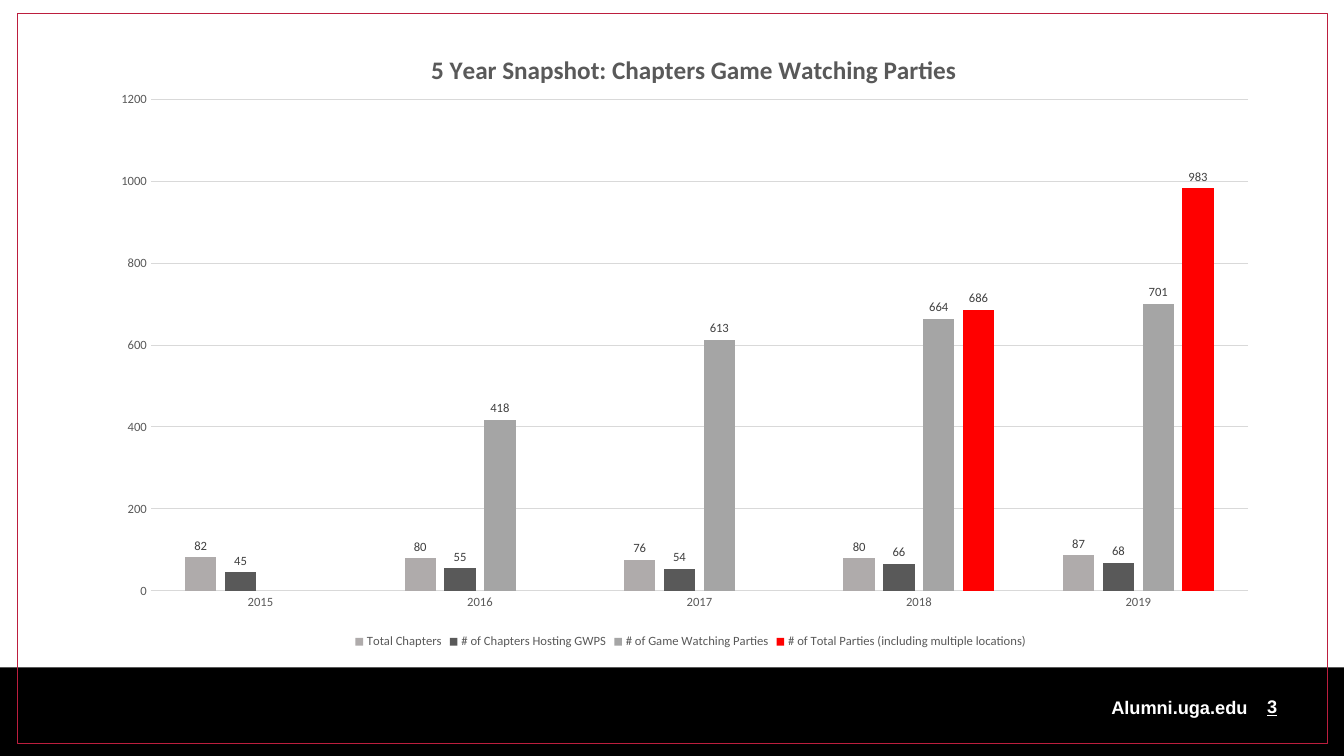
from lxml import etree
from pptx import Presentation
from pptx import util as u
from pptx.chart.data import CategoryChartData
from pptx.dml.color import RGBColor
from pptx.enum import chart as ch
from pptx.enum import shapes, text
from pptx.oxml.ns import qn

WHITE = RGBColor(0xFF, 0xFF, 0xFF)
BLACK = RGBColor(0, 0, 0)
CRIMSON = RGBColor(0xBC, 0x1E, 0x3E)
GRID = RGBColor(0xD9, 0xD9, 0xD9)
AXIS_TEXT = RGBColor(0x59, 0x59, 0x59)
LABEL_TEXT = RGBColor(0x40, 0x40, 0x40)

YEARS = ["2015", "2016", "2017", "2018", "2019"]
SERIES = [
    ("Total Chapters", (82, 80, 76, 80, 87), RGBColor(0xAF, 0xAB, 0xAB)),
    ("# of Chapters Hosting GWPS", (45, 55, 54, 66, 68), AXIS_TEXT),
    ("# of Game Watching Parties", (None, 418, 613, 664, 701), RGBColor(0xA5, 0xA5, 0xA5)),
    ("# of Total Parties (including multiple locations)", (None, None, None, 686, 983),
     RGBColor(0xFF, 0, 0)),
]


def style_font(font, size, color, name="Calibri", bold=False, underline=False):
    """Set the usual attributes of a font."""
    font.size, font.name, font.bold, font.underline = u.Pt(size), name, bold, underline
    font.color.rgb = color


def add_text(page, box, content, align=text.PP_ALIGN.LEFT, anchor=text.MSO_ANCHOR.TOP,
             line_spacing=1.0, **font):
    """Place one line of text in a box given in inches."""
    frame = page.shapes.add_textbox(*map(u.Inches, box)).text_frame
    frame.word_wrap = True
    frame.vertical_anchor = anchor
    para = frame.paragraphs[0]
    para.alignment, para.line_spacing = align, line_spacing
    span = para.add_run()
    span.text = content
    style_font(span.font, **font)


def add_rectangle(page, box, fill=None, line=None):
    """Place a rectangle with an optional fill and outline."""
    shape = page.shapes.add_shape(shapes.MSO_SHAPE.RECTANGLE, *map(u.Inches, box))
    shape.shadow.inherit = False
    if fill is None:
        shape.fill.background()
    else:
        shape.fill.solid()
        shape.fill.fore_color.rgb = fill
    if line is None:
        shape.line.fill.background()
    else:
        shape.line.color.rgb = line
        shape.line.width = u.Pt(0.75)


def add_footer(page, left, top, width, height):
    """Draw the black band, the page border, the web address and the page number."""
    add_rectangle(page, (left, top, width, height), fill=BLACK)
    add_rectangle(page, (left + 0.17, 0.13, 13, 7.25), line=CRIMSON)
    font = dict(size=13, color=WHITE, name="Arial", bold=True)
    number_left = left + 12.47
    add_text(page, (number_left, top + 0.2, 0.82, 0.37), "3",
             anchor=text.MSO_ANCHOR.MIDDLE, underline=True, **font)
    add_text(page, (number_left - 5.71, top + 0.26, 5.71, 0.25), "Alumni.uga.edu",
             align=text.PP_ALIGN.RIGHT, line_spacing=0.9, **font)


def set_layout(parent, index, **values):
    """Give a chart part a manual layout at the given child index."""
    for old in parent.findall(qn("c:layout")):
        parent.remove(old)
    layout = etree.Element(qn("c:layout"))
    manual = etree.SubElement(layout, qn("c:manualLayout"))
    for tag, value in values.items():
        etree.SubElement(manual, qn("c:" + tag)).set("val", str(value))
    parent.insert(index, layout)


def style_axis(axis):
    """Set the tick marks and text of an axis."""
    axis.major_tick_mark = axis.minor_tick_mark = ch.XL_TICK_MARK.NONE
    style_font(axis.tick_labels.font, 9, AXIS_TEXT)


def style_line(line):
    """Make a thin pale chart line."""
    line.color.rgb = GRID
    line.width = u.Pt(0.75)


def add_parties_chart(page, left, top, width, height):
    """Draw the clustered column chart of game watching parties."""
    data = CategoryChartData()
    data.categories = YEARS
    for name, values, _ in SERIES:
        data.add_series(name, values)
    box = map(u.Inches, (left, top, width, height))
    chart = page.shapes.add_chart(ch.XL_CHART_TYPE.COLUMN_CLUSTERED, *box, data).chart
    style_font(chart.font, 10, BLACK)

    title = chart.chart_title
    span = title.text_frame.paragraphs[0].add_run()
    span.text = "5 Year Snapshot: Chapters Game Watching Parties"
    style_font(span.font, 18, AXIS_TEXT, bold=True)
    title.include_in_layout = False
    set_layout(title._element, 1, xMode="edge", yMode="edge", x=0.275, y=0.036)

    chart.has_legend = True
    chart.legend.position = ch.XL_LEGEND_POSITION.BOTTOM
    chart.legend.include_in_layout = False
    style_font(chart.legend.font, 9, AXIS_TEXT)

    style_axis(chart.category_axis)
    style_line(chart.category_axis.format.line)
    values_axis = chart.value_axis
    style_axis(values_axis)
    values_axis.minimum_scale, values_axis.maximum_scale, values_axis.major_unit = 0, 1200, 200
    values_axis.format.line.fill.background()
    style_line(values_axis.major_gridlines.format.line)

    plot = chart.plots[0]
    plot.gap_width, plot.overlap, plot.vary_by_categories = 219, -27, False
    for series, (_, _, color) in zip(plot.series, SERIES):
        series.format.fill.solid()
        series.format.fill.fore_color.rgb = color
        series.invert_if_negative = False
        labels = series.data_labels
        labels.show_value = True
        labels.position = ch.XL_LABEL_POSITION.OUTSIDE_END
        style_font(labels.font, 9, LABEL_TEXT)
    plot_area = chart._chartSpace.find(".//" + qn("c:plotArea"))
    set_layout(plot_area, 0, layoutTarget="inner", xMode="edge", yMode="edge",
               x=0.04, y=0.118, w=0.935, h=0.783)


def main():
    """Build and save the deck."""
    deck = Presentation()
    deck.slide_width, deck.slide_height = u.Inches(13.33), u.Inches(7.5)
    page = deck.slides.add_slide(deck.slide_layouts[6])
    page.background.fill.solid()
    page.background.fill.fore_color.rgb = WHITE
    add_footer(page, 0, 6.62, 13.33, 0.88)
    add_parties_chart(page, 1.03, 0.25, 11.64, 6.23)
    deck.save("out.pptx")


if __name__ == "__main__":
    main()
